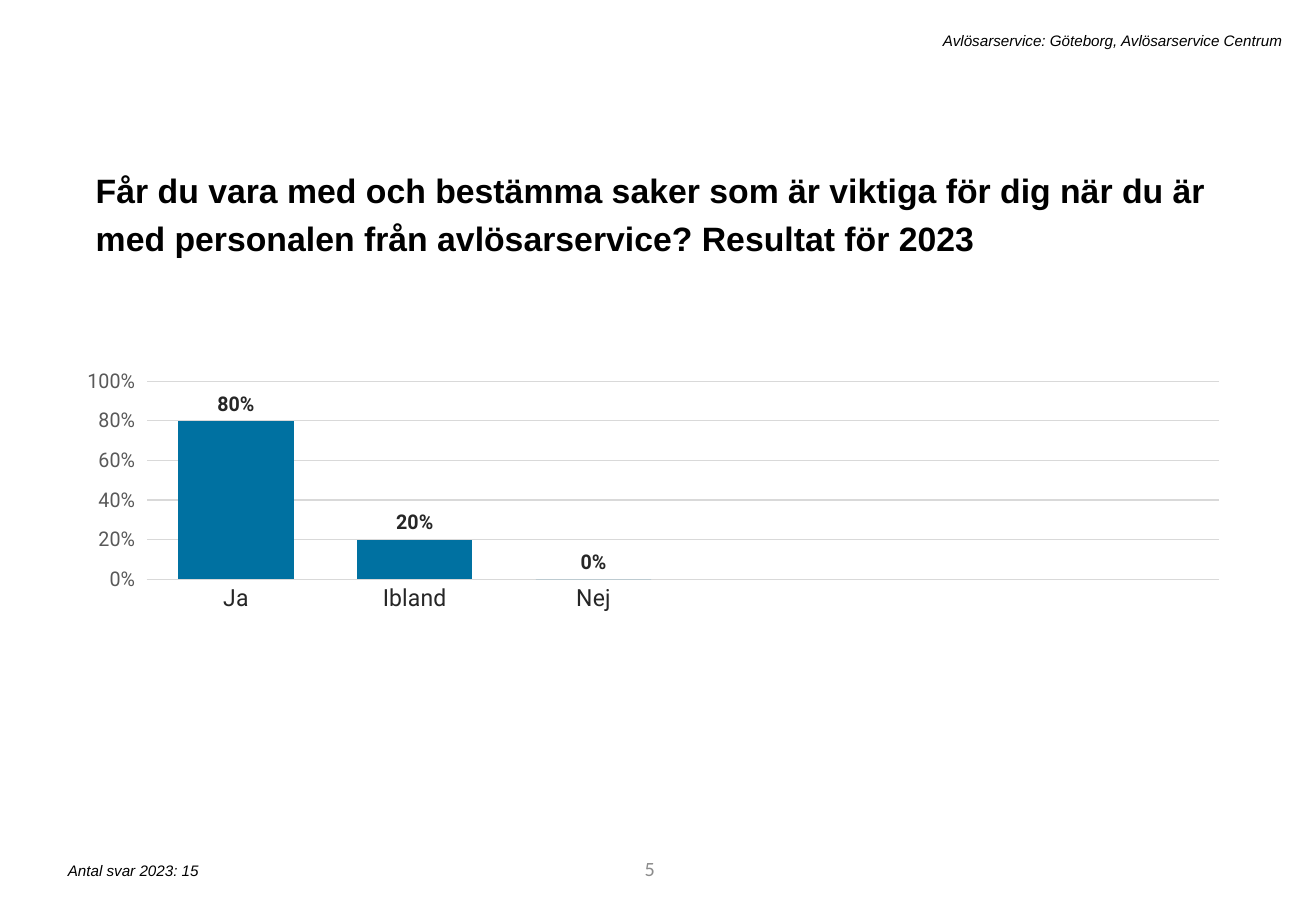
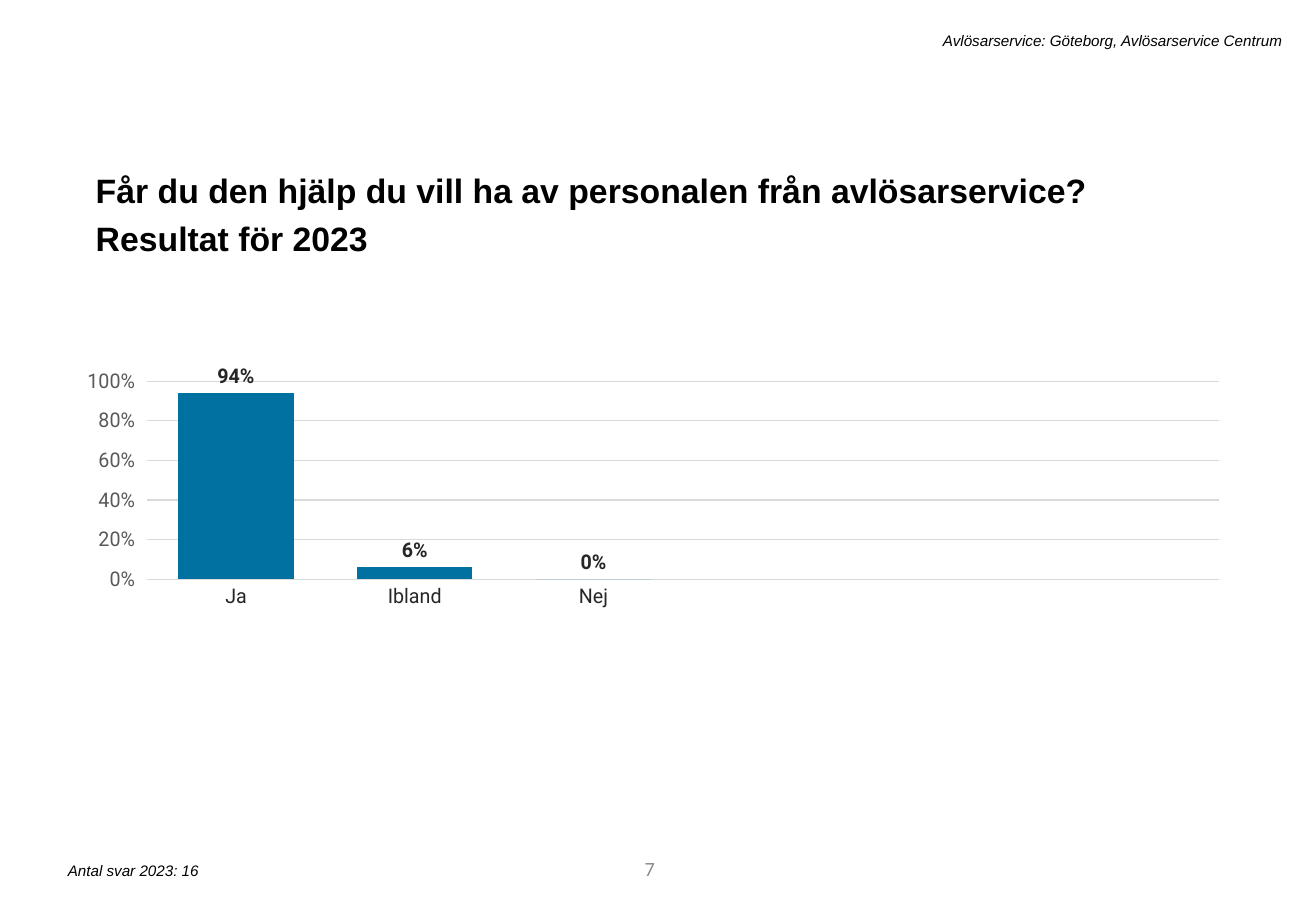
from collections import namedtuple

from lxml.etree import SubElement
from pptx import Presentation
from pptx.chart.data import CategoryChartData
from pptx.dml.color import RGBColor
from pptx.enum.chart import XL_CHART_TYPE, XL_LABEL_POSITION, XL_TICK_MARK
from pptx.enum.text import MSO_ANCHOR, MSO_AUTO_SIZE, PP_ALIGN
from pptx.oxml.ns import qn
from pptx.util import Pt

Box = namedtuple("Box", "left top width height")
Style = namedtuple("Style", "font size color bold italic", defaults=(False, False))
Result = namedtuple("Result", "question values answers page category_size")

# Shared look
TITLE = Style("Arial", 20, "000000", bold=True)
NOTE = Style("Arial", 9, "000000", italic=True)
PAGE_NUMBER = Style("Calibri", 12, "8C8C8C")
CHART_TEXT = Style("Roboto", 10, "000000")
CATEGORY_TEXT = Style("Roboto", 12, "262626")
VALUE_TEXT = Style("Roboto", 12, "595959")
LABEL_TEXT = Style("Roboto", 12, "262626", bold=True)
BAR_COLOR = "0071A1"
GRID_COLOR = "D9D9D9"

# Shared places, in points
SLIDE_WIDTH, SLIDE_HEIGHT = 780, 540
HEADER_BOX = Box(128.9, 15.1, 638, 18)
TITLE_BOX = Box(49.7, 92.2, 676.8, 33.8)
CHART_BOX = Box(51.8, 182.2, 676.8, 284.4)
FOOTER_BOX = Box(33.1, 506.9, 317.5, 18)
PAGE_BOX = Box(219.6, 500.4, 175.7, 28.8)

UNIT = "Avlösarservice: Göteborg, Avlösarservice Centrum"
CATEGORIES = ["Ja", "Ibland", "Nej", "", "", ""]
PLOT_LAYOUT = {"x": 0.025, "y": 0.154, "w": 0.966, "h": 0.413}

RESULTS = [
    Result("Får du vara med och bestämma saker som är viktiga för dig när du är "
           "med personalen från avlösarservice? Resultat för 2023",
           [0.8, 0.2, 0], 15, 5, 14),
    Result("Får du den hjälp du vill ha av personalen från avlösarservice? "
           "Resultat för 2023",
           [0.94, 0.06, 0], 16, 7, 12),
]


def rgb(color):
    return RGBColor.from_string(color)


def apply_style(font, style):
    font.name = style.font
    font.size = Pt(style.size)
    font.color.rgb = rgb(style.color)
    font.bold = style.bold
    font.italic = style.italic


def add_text(slide, box, text, style, align=PP_ALIGN.LEFT, anchor=MSO_ANCHOR.TOP):
    shape = slide.shapes.add_textbox(*map(Pt, box))
    frame = shape.text_frame
    frame.word_wrap = True
    frame.vertical_anchor = anchor
    paragraph = frame.paragraphs[0]
    paragraph.alignment = align
    run = paragraph.add_run()
    run.text = text
    apply_style(run.font, style)
    return shape


def add_title(slide, box, text):
    frame = add_text(slide, box, text, TITLE).text_frame
    frame.auto_size = MSO_AUTO_SIZE.SHAPE_TO_FIT_TEXT
    frame.paragraphs[0].line_spacing = 1.2
    frame.paragraphs[0].space_before = Pt(10)


def set_plot_layout(chart, layout):
    plot_area = chart.element.find(".//" + qn("c:plotArea"))
    for old_layout in plot_area.findall(qn("c:layout")):
        plot_area.remove(old_layout)
    holder = SubElement(plot_area, qn("c:layout"))
    plot_area.insert(0, holder)
    manual = SubElement(holder, qn("c:manualLayout"))
    settings = {"layoutTarget": "inner", "xMode": "edge", "yMode": "edge", **layout}
    for name, value in settings.items():
        SubElement(manual, qn("c:" + name)).set("val", str(value))


def set_line(line, color):
    line.color.rgb = rgb(color)
    line.width = Pt(0.75)


def add_result_chart(slide, box, values, category_size):
    data = CategoryChartData(number_format="0%")
    data.categories = CATEGORIES
    data.add_series("Series 1", values + [None] * (len(CATEGORIES) - len(values)))
    chart = slide.shapes.add_chart(
        XL_CHART_TYPE.COLUMN_CLUSTERED, *map(Pt, box), data).chart
    chart.has_title = False
    chart.has_legend = False
    apply_style(chart.font, CHART_TEXT)
    set_plot_layout(chart, PLOT_LAYOUT)

    # Axes
    category_axis = chart.category_axis
    category_axis.major_tick_mark = XL_TICK_MARK.NONE
    apply_style(category_axis.tick_labels.font,
                CATEGORY_TEXT._replace(size=category_size))
    set_line(category_axis.format.line, GRID_COLOR)

    value_axis = chart.value_axis
    value_axis.minimum_scale, value_axis.maximum_scale = 0, 1
    value_axis.major_unit = 0.2
    value_axis.major_tick_mark = XL_TICK_MARK.OUTSIDE
    value_axis.format.line.fill.background()
    value_axis.tick_labels.number_format = "0%"
    value_axis.tick_labels.number_format_is_linked = False
    apply_style(value_axis.tick_labels.font, VALUE_TEXT)
    set_line(value_axis.major_gridlines.format.line, GRID_COLOR)

    # Bars and their labels
    plot = chart.plots[0]
    plot.gap_width = 55
    plot.vary_by_categories = False
    series = plot.series[0]
    series.format.fill.solid()
    series.format.fill.fore_color.rgb = rgb(BAR_COLOR)
    labels = series.data_labels
    labels.show_value = True
    labels.position = XL_LABEL_POSITION.OUTSIDE_END
    labels.number_format = "0%"
    labels.number_format_is_linked = False
    apply_style(labels.font, LABEL_TEXT)


def add_result_slide(presentation, result):
    slide = presentation.slides.add_slide(presentation.slide_layouts[6])
    add_text(slide, PAGE_BOX, str(result.page), PAGE_NUMBER,
             PP_ALIGN.RIGHT, MSO_ANCHOR.MIDDLE)
    add_result_chart(slide, CHART_BOX, result.values, result.category_size)
    add_title(slide, TITLE_BOX, result.question)
    add_text(slide, HEADER_BOX, UNIT, NOTE, PP_ALIGN.RIGHT)
    add_text(slide, FOOTER_BOX, f"Antal svar 2023: {result.answers}", NOTE)


def main():
    presentation = Presentation()
    presentation.slide_width = Pt(SLIDE_WIDTH)
    presentation.slide_height = Pt(SLIDE_HEIGHT)
    for result in RESULTS:
        add_result_slide(presentation, result)
    presentation.save("out.pptx")


if __name__ == "__main__":
    main()
